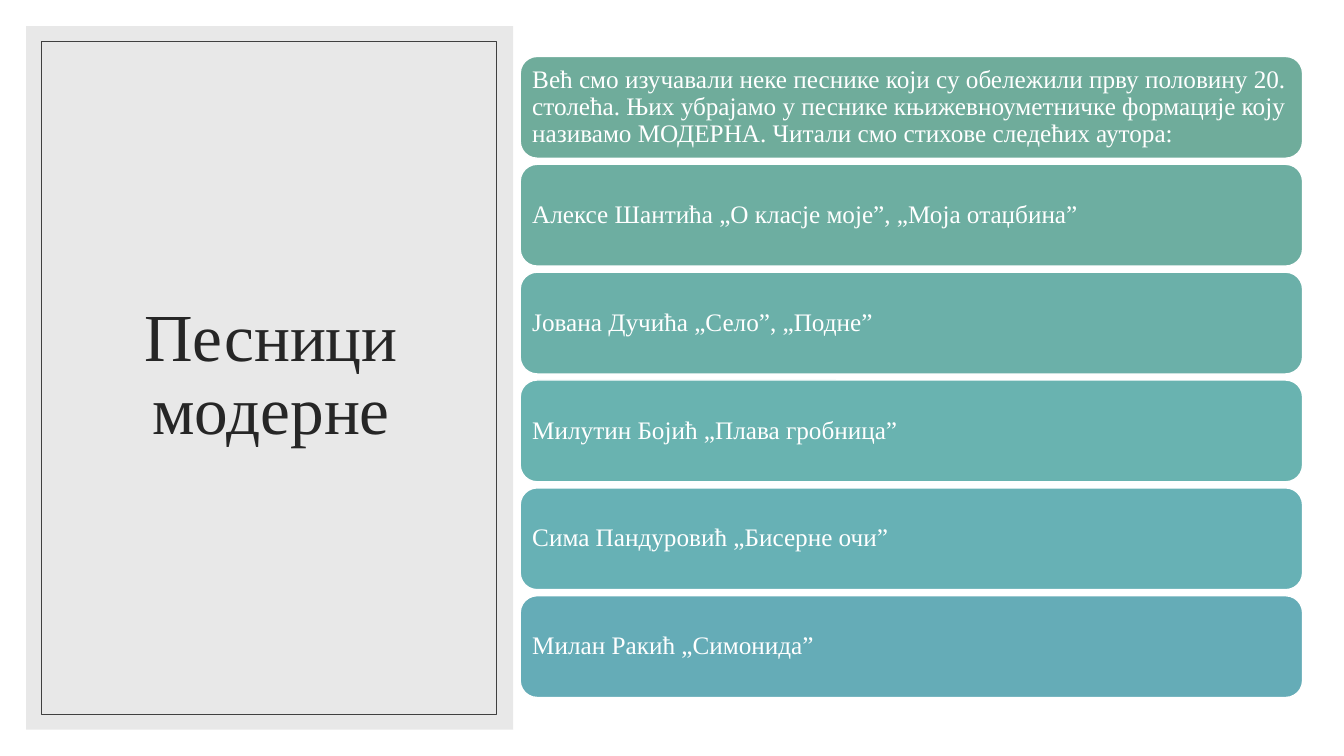
from dataclasses import dataclass

from lxml.etree import SubElement
from pptx import Presentation
from pptx.dml.color import RGBColor
from pptx.enum.shapes import MSO_SHAPE
from pptx.enum.text import MSO_ANCHOR, MSO_AUTO_SIZE, PP_ALIGN
from pptx.oxml.ns import qn
from pptx.shapes.autoshape import Shape
from pptx.slide import Slide
from pptx.util import Inches, Pt

FONT = "Times New Roman"
CARD_LEFT, CARD_TOP = 5.16, 0.56
CARD_WIDTH, CARD_HEIGHT = 7.76, 1.01
CARD_STEP = 1.07


@dataclass
class Card:
    text: str
    fill: str


CARDS = [
    Card("Већ смо изучавали неке песнике који су обележили прву половину 20. столећа. "
         "Њих убрајамо у песнике књижевноуметничке формације коју називамо МОДЕРНА. "
         "Читали смо стихове следећих аутора:", "6FAC9B"),
    Card("Алексе Шантића „О класје моје”, „Моја отаџбина”", "6DAEA1"),
    Card("Јована Дучића „Село”, „Подне”", "6BB0A9"),
    Card("Милутин Бојић „Плава гробница”", "69B3B0"),
    Card("Сима Пандуровић „Бисерне очи”", "67B1B5"),
    Card("Милан Ракић „Симонида”", "65ACB7"),
]


def rgb(value: str) -> RGBColor:
    return RGBColor.from_string(value)


def add_box(s: Slide, kind: MSO_SHAPE, left: float, top: float, width: float, height: float,
            fill: str | None = None, line: str | None = None, weight: float = 1) -> Shape:
    sp = s.shapes.add_shape(kind, Inches(left), Inches(top), Inches(width), Inches(height))
    sp.shadow.inherit = False
    if fill:
        sp.fill.solid()
        sp.fill.fore_color.rgb = rgb(fill)
    else:
        sp.fill.background()
    if line:
        sp.line.color.rgb = rgb(line)
        sp.line.width = Pt(weight)
    else:
        sp.line.fill.background()
    return sp


def set_text(sp: Shape, text: str, *, size: float, color: str,
             align: PP_ALIGN = PP_ALIGN.LEFT, inset: float | None = None) -> None:
    tf = sp.text_frame
    tf.word_wrap = True
    tf.auto_size = MSO_AUTO_SIZE.NONE
    tf.vertical_anchor = MSO_ANCHOR.MIDDLE
    if inset is not None:
        tf.margin_left = tf.margin_right = tf.margin_top = tf.margin_bottom = Inches(inset)
    p = tf.paragraphs[0]
    p.alignment = align
    p.line_spacing = 0.9
    r = p.add_run()
    r.text = text
    r.font.name = FONT
    r.font.size = Pt(size)
    r.font.color.rgb = rgb(color)


def set_opacity(sp: Shape, percent: int) -> None:
    color = sp.fill._xPr.find(qn("a:solidFill"))[0]
    SubElement(color, qn("a:alpha")).set("val", str(percent * 1000))


def main() -> None:
    prs = Presentation()
    prs.slide_width, prs.slide_height = Inches(13.33), Inches(7.5)
    s = prs.slides.add_slide(prs.slide_layouts[5])
    s.background.fill.solid()
    s.background.fill.fore_color.rgb = rgb("FFFFFF")

    # Title panel
    panel = add_box(s, MSO_SHAPE.RECTANGLE, 0.26, 0.26, 4.83, 6.98, fill="D9D9D9")
    set_opacity(panel, 60)

    # Title, raised above the panel
    title = s.shapes.title
    title.left, title.top = Inches(0.63), Inches(0.61)
    title.width, title.height = Inches(4.12), Inches(6.24)
    set_text(title, "Песници модерне", size=48, color="262626", align=PP_ALIGN.CENTER)
    panel._element.addnext(title._element)

    # Thin frame
    add_box(s, MSO_SHAPE.RECTANGLE, 0.41, 0.41, 4.51, 6.68, line="404040", weight=0.5)

    # Poet cards
    for i, card in enumerate(CARDS):
        sp = add_box(s, MSO_SHAPE.ROUNDED_RECTANGLE, CARD_LEFT, CARD_TOP + i * CARD_STEP,
                     CARD_WIDTH, CARD_HEIGHT, fill=card.fill, line="FFFFFF")
        set_text(sp, card.text, size=18, color="FFFFFF", inset=0.07)

    prs.save("out.pptx")


if __name__ == "__main__":
    main()
